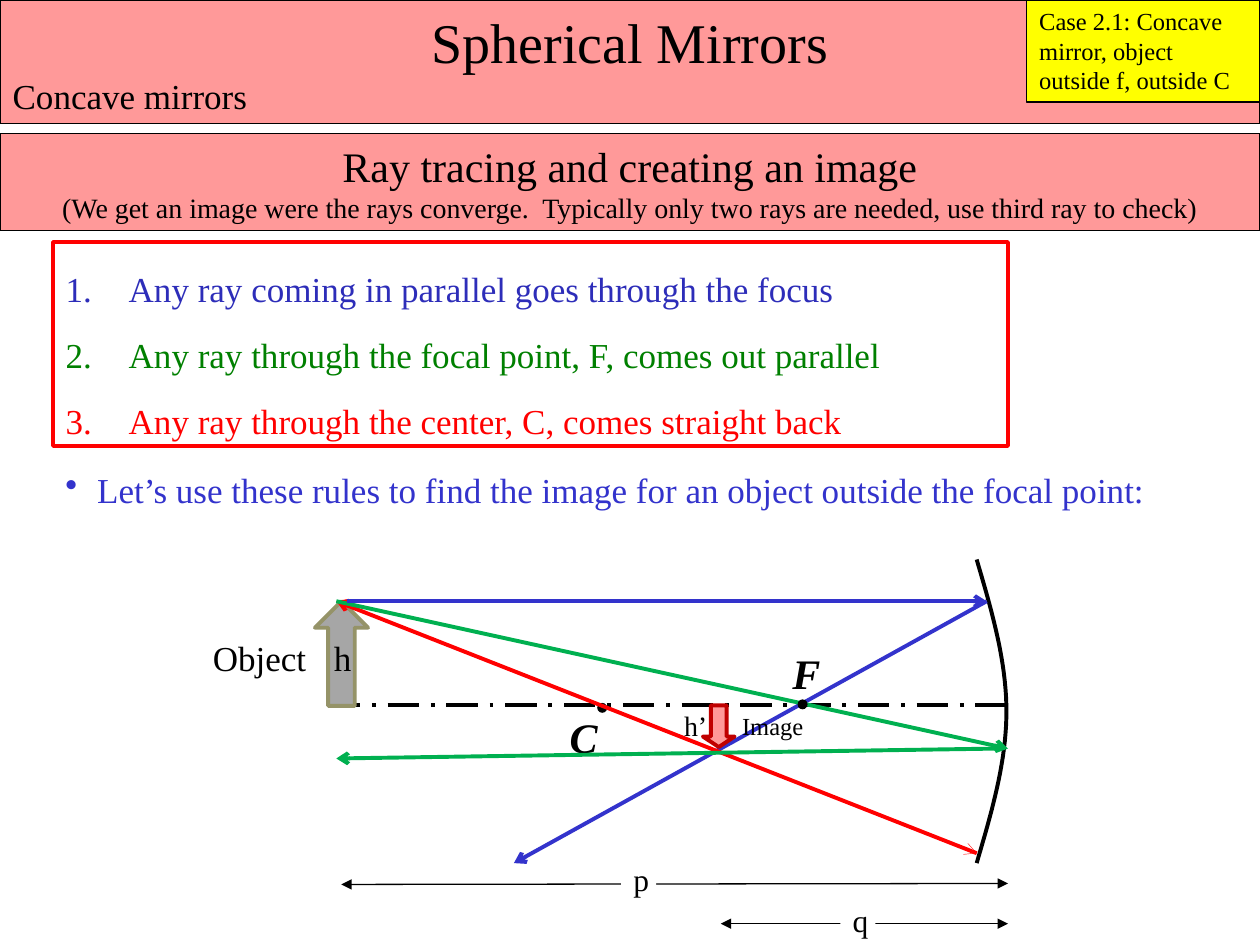
"""Build the slide on ray tracing with a concave spherical mirror."""
from dataclasses import dataclass

import lxml.etree
import pptx
import pptx.dml.color
import pptx.enum.dml
import pptx.enum.shapes
import pptx.enum.text
import pptx.oxml.ns
import pptx.util

Cm, Pt = pptx.util.Cm, pptx.util.Pt
Align = pptx.enum.text.PP_ALIGN
Anchor = pptx.enum.text.MSO_ANCHOR
Shape = pptx.enum.shapes.MSO_SHAPE

BLACK, WHITE, PINK, YELLOW = "000000", "FFFFFF", "FF9999", "FFFF00"
BLUE, RED, GREEN = "3333CC", "FF0000", "00B050"
AXIS_Y, MIRROR_X = 14.22, 20.32
TIP = (6.78, 12.12)


@dataclass
class Line:
    text: str
    size: float
    color: str = BLACK
    align: Align = Align.LEFT
    slanted: bool = False
    bullet: tuple = ()
    indent: float = 0
    spacing: float = 1.0
    before: float = 0


@dataclass
class Ray:
    start: tuple
    end: tuple
    color: str = BLACK
    width: float = 2.25
    head: str = ""
    tail: str = "arrow"
    dash: object = None


@dataclass
class Label:
    line: Line
    box: tuple
    wrap: bool = True
    fill: str = ""


def rgb(code: str):
    """Turn a hex string into a colour."""
    return pptx.dml.color.RGBColor.from_string(code)


def place(shape, box: tuple) -> None:
    """Move a shape to left, top, width and height in centimetres."""
    for side, length in zip(("left", "top", "width", "height"), box):
        setattr(shape, side, Cm(length))


def paint(shape, fill: str = "", outline: str = "", width: float = 0.75) -> None:
    """Set fill and outline, each left empty without a colour."""
    if fill:
        shape.fill.solid()
        shape.fill.fore_color.rgb = rgb(fill)
    else:
        shape.fill.background()
    if outline:
        shape.line.color.rgb = rgb(outline)
        shape.line.width = Pt(width)
    else:
        shape.line.fill.background()


def write(shape, lines: list, anchor=Anchor.TOP, wrap: bool = True) -> None:
    """Fill a text frame with formatted lines."""
    frame = shape.text_frame
    frame_format = {"word_wrap": wrap, "vertical_anchor": anchor,
                    "auto_size": pptx.enum.text.MSO_AUTO_SIZE.NONE}
    for key, value in frame_format.items():
        setattr(frame, key, value)
    for index, line in enumerate(lines):
        paragraph = frame.add_paragraph() if index else frame.paragraphs[0]
        properties = paragraph._p.get_or_add_pPr()
        if line.bullet:
            tag, key, value = line.bullet
            properties.set("marL", str(Cm(line.indent)))
            properties.set("indent", str(-Cm(line.indent)))
            lxml.etree.SubElement(properties, pptx.oxml.ns.qn(tag)).set(key, value)
        paragraph_format = {"alignment": line.align, "line_spacing": line.spacing,
                            "space_before": Pt(line.before)}
        for key, value in paragraph_format.items():
            setattr(paragraph, key, value)
        run = paragraph.add_run()
        run.text = line.text
        font_format = {"name": "Times New Roman", "size": Pt(line.size),
                       "bold": line.slanted, "italic": line.slanted}
        for key, value in font_format.items():
            setattr(run.font, key, value)
        run.font.color.rgb = rgb(line.color)


def add_figure(slide, kind, box: tuple, fill: str, outline: str = "", width: float = 0.75):
    """Add a preset shape without shadow."""
    figure = slide.shapes.add_shape(kind, *map(Cm, box))
    figure.shadow.inherit = False
    paint(figure, fill, outline, width)
    return figure


def add_ray(slide, ray: Ray) -> None:
    """Add a straight line with optional arrowheads."""
    connector = slide.shapes.add_connector(
        pptx.enum.shapes.MSO_CONNECTOR.STRAIGHT, *map(Cm, ray.start + ray.end))
    connector.line.color.rgb = rgb(ray.color)
    connector.line.width = Pt(ray.width)
    if ray.dash:
        connector.line.dash_style = ray.dash
    outline = connector.line._get_or_add_ln()
    for tag, kind in (("a:headEnd", ray.head), ("a:tailEnd", ray.tail)):
        if kind:
            lxml.etree.SubElement(outline, pptx.oxml.ns.qn(tag)).set("type", kind)
    lxml.etree.SubElement(connector._element.spPr, pptx.oxml.ns.qn("a:effectLst"))


def add_label(slide, label: Label) -> None:
    """Add a text box holding one line."""
    box = slide.shapes.add_textbox(*map(Cm, label.box))
    paint(box, label.fill)
    write(box, [label.line], wrap=label.wrap)


def add_mirror(slide) -> None:
    """Draw the curved mirror surface."""
    top, half_height, steps = 11.28, 3.06, 20
    points = []
    for step in range(2 * steps + 1):
        rise = 1 - abs(step / steps - 1)
        points.append((Cm(19.69 + 0.3 * (3 * rise - rise ** 3)),
                       Cm(top + half_height * step / steps)))
    builder = slide.shapes.build_freeform(*points[0])
    builder.add_line_segments(points[1:], close=False)
    mirror = builder.convert_to_shape()
    mirror.shadow.inherit = False
    paint(mirror, outline=BLACK, width=2.25)


def main() -> None:
    """Assemble and save the slide."""
    deck = pptx.Presentation()
    deck.slide_width, deck.slide_height = Cm(25.4), Cm(19.05)
    slide = deck.slides.add_slide(deck.slide_layouts[1])

    heading, rules = slide.shapes.title, slide.placeholders[1]
    place(heading, (0, 0, 25.4, 2.49))
    paint(heading, PINK, BLACK)
    write(heading, [Line("Spherical Mirrors", 32, align=Align.CENTER),
                    Line("Concave mirrors", 20)], Anchor.MIDDLE)

    place(rules, (1.07, 4.88, 19.25, 4.11))
    paint(rules, outline=RED, width=2.25)
    rule_texts = (("Any ray coming in parallel goes through the focus", "2D2DB9"),
                  ("Any ray through the focal point, F, comes out parallel", "008000"),
                  ("Any ray through the center, C, comes straight back", RED))
    write(rules, [Line(text, 20, color, indent=1.27, spacing=1.5, before=1.5 if index else 0,
                       bullet=("a:buAutoNum", "type", "arabicPeriod"))
                  for index, (text, color) in enumerate(rule_texts)], Anchor.MIDDLE)

    method = add_figure(slide, Shape.RECTANGLE, (0, 2.69, 25.4, 1.96), PINK, BLACK)
    write(method, [
        Line("Ray tracing and creating an image", 24, align=Align.CENTER),
        Line("(We get an image were the rays converge.  Typically only two rays are needed, "
             "use third ray to check)", 16, align=Align.CENTER)], Anchor.MIDDLE)
    case = add_figure(slide, Shape.RECTANGLE, (20.7, 0, 4.7, 2.06), YELLOW, BLACK)
    write(case, [Line("Case 2.1: Concave mirror, object outside f, outside C", 14)])

    add_mirror(slide)
    add_figure(slide, Shape.OVAL, (12.04, 14.17, 0.2, 0.2), BLACK)
    add_label(slide, Label(Line("C", 24, align=Align.CENTER, slanted=True),
                           (11.23, 14.22, 1.07, 1.27)))
    add_ray(slide, Ray((19.89, TIP[1]), (10.36, 17.4), BLUE))
    add_ray(slide, Ray((6.63, AXIS_Y), (MIRROR_X, AXIS_Y), tail="",
                       dash=pptx.enum.dml.MSO_LINE.LONG_DASH_DOT))
    add_figure(slide, Shape.UP_ARROW, (6.35, 12.12, 1.07, 2.11), "A6A6A6", "959368", 2.25)
    center_hit = (19.69, 17.2)
    for ray in (Ray(TIP, center_hit, RED, 0.25), Ray(center_hit, TIP, RED),
                Ray(TIP, (MIRROR_X, 15.09), GREEN), Ray((20.12, 15.09), (TIP[0], 15.29), GREEN),
                Ray((6.99, TIP[1]), (19.89, TIP[1]), BLUE)):
        add_ray(slide, ray)
    image = add_figure(slide, Shape.DOWN_ARROW, (14.17, AXIS_Y, 0.64, 0.84), PINK, "C00000", 2.25)
    image.adjustments[1] = 0.33
    add_figure(slide, Shape.OVAL, (16.08, 14.1, 0.2, 0.2), BLACK)
    for distance in (Ray((6.88, 17.83), (MIRROR_X, 17.81), BLACK, 0.75, "triangle", "triangle"),
                     Ray((14.53, 18.62), (MIRROR_X, 18.62), BLACK, 0.75, "triangle", "triangle")):
        add_ray(slide, distance)
    for label in (
            Label(Line("Let’s use these rules to find the image for an object outside "
                       "the focal point:", 20, BLUE, bullet=("a:buChar", "char", "•"),
                       indent=0.64), (1.07, 9.32, 23.06, 1.12)),
            Label(Line("F", 24, align=Align.CENTER, slanted=True), (15.72, 12.93, 1.07, 1.27)),
            Label(Line("Object", 20), (4.04, 12.7, 2.97, 1.12)),
            Label(Line("h", 20), (6.48, 12.7, 2.97, 1.12)),
            Label(Line("Image", 14), (14.71, 14.2, 2.97, 0.86)),
            Label(Line("h’", 16), (13.54, 14.15, 0.99, 0.94), wrap=False),
            Label(Line("p", 18), (12.52, 17.22, 0.71, 1.02), fill=WHITE),
            Label(Line("q", 18), (16.94, 18.03, 0.71, 1.02), fill=WHITE)):
        add_label(slide, label)
    deck.save("out.pptx")


if __name__ == "__main__":
    main()
